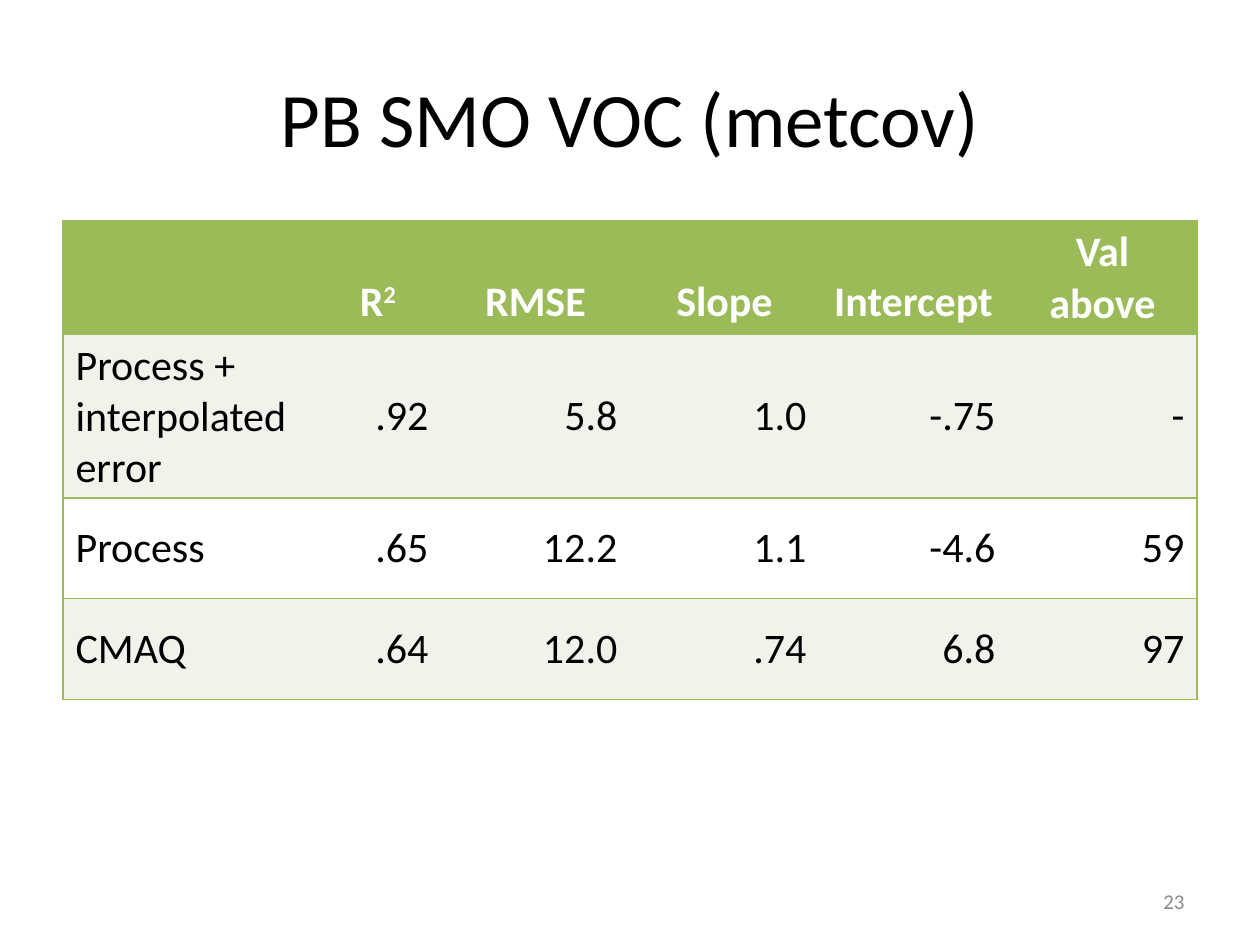
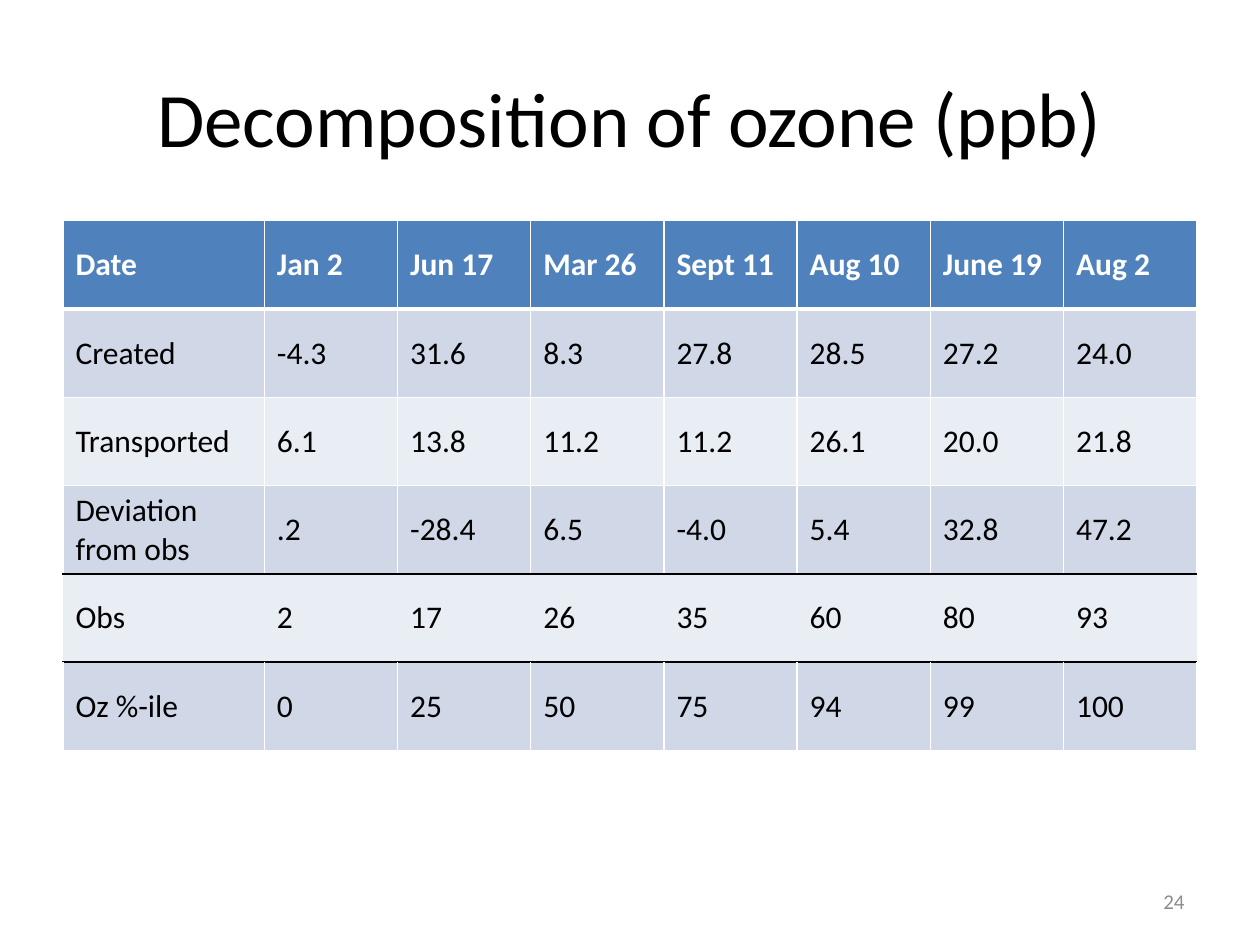
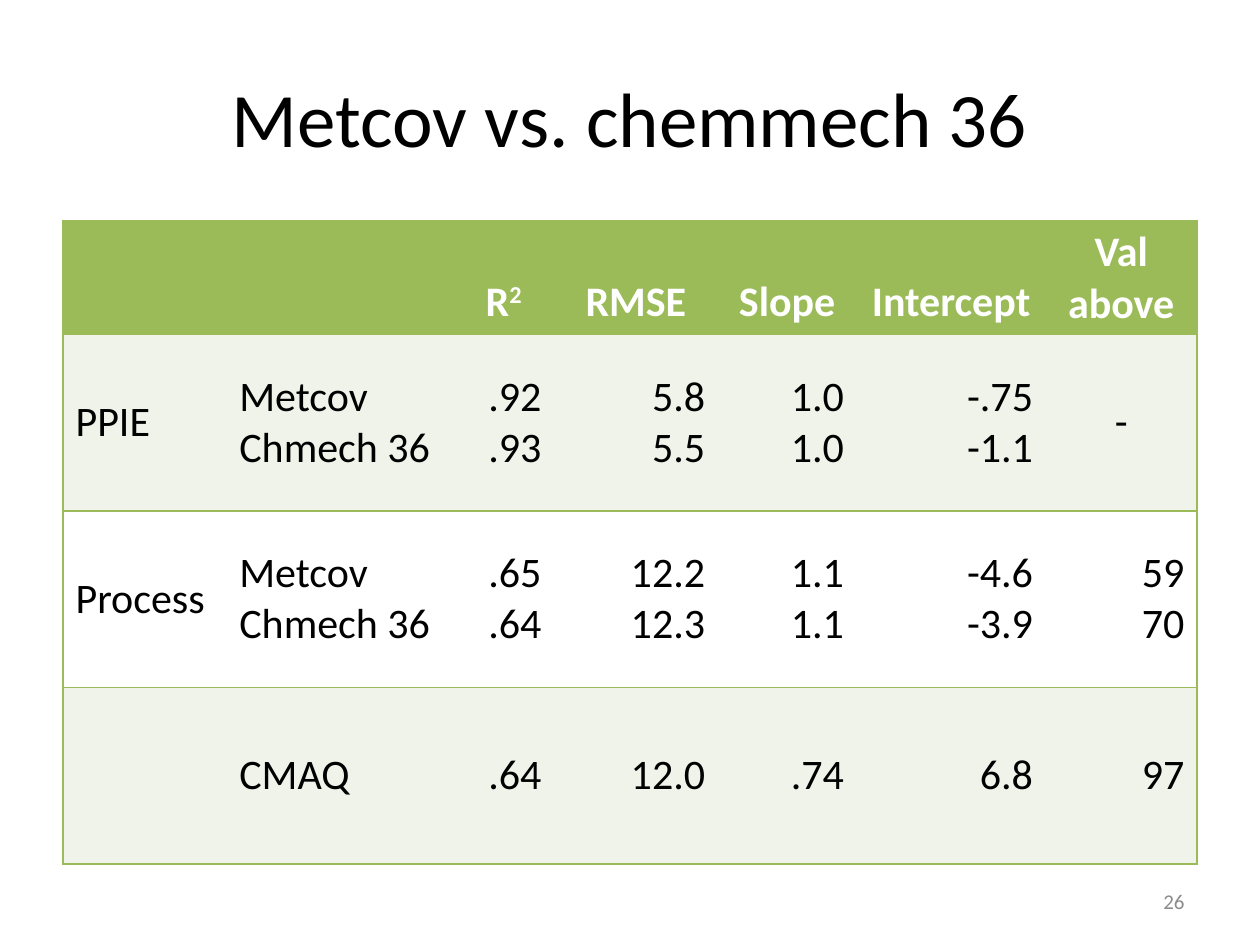
"""Build three slides of ozone model tables."""
from dataclasses import dataclass

from lxml.etree import SubElement
from pptx import Presentation
from pptx.dml.color import RGBColor
from pptx.enum.text import MSO_ANCHOR as Anchor, PP_ALIGN as Align
from pptx.oxml.ns import qn
from pptx.util import Cm, Pt


@dataclass(frozen=True)
class Theme:
    font: str = "Calibri"
    title_size: int = 44
    score_size: int = 24
    ozone_size: int = 18
    number_size: int = 12
    black: str = "000000"
    white: str = "FFFFFF"
    grey: str = "8C8C8C"
    green: str = "9BBB59"
    green_tint: str = "EFF3EA"
    blue: str = "4F81BD"
    blue_dark_tint: str = "D0D8E8"
    blue_light_tint: str = "E9EDF4"


THEME = Theme()
SLIDE_SIZE = (25.4, 19.05)
TITLE_BOX = (1.27, 0.76, 22.86, 3.18)
NUMBER_BOX = (18.21, 17.65, 5.92, 1.02)
TABLE_LEFT, TABLE_TOP, TABLE_WIDTH = 1.27, 4.45, 22.86
DATE_LABEL_WIDTH, DATE_COUNT = 4.06, 7
DATE_WIDTH = (TABLE_WIDTH - DATE_LABEL_WIDTH) / DATE_COUNT
NO_STYLE = "{2D5ABB26-0587-4C30-8999-92F81FD0307C}"
SCORES = ["R^2", "RMSE", "Slope", "Intercept", "Val above"]


def score_edges(row, column, last_column):
    edges = {"T": (THEME.green, 1), "B": (THEME.green, 1)}
    if column == 0:
        edges["L"] = (THEME.green, 1)
    if column == last_column:
        edges["R"] = (THEME.green, 1)
    return edges


def ozone_edges(row, column, last_column):
    thin, thick, rule = (THEME.white, 1), (THEME.white, 3), (THEME.black, 1)
    sides = {"L": thin, "R": thin}
    return [
        {**sides, "T": thin, "B": thick},
        {**sides, "T": thick, "B": thin},
        {**sides, "T": thin, "B": thin},
        {**sides, "T": thin, "B": rule},
        {"T": rule},
        {**sides, "B": thin},
    ][row]


SCORE_STYLE = {
    "size": THEME.score_size,
    "header_fill": THEME.green,
    "bands": (THEME.green_tint, THEME.white),
    "header_align": Align.CENTER,
    "header_anchor": Anchor.BOTTOM,
    "value_align": Align.RIGHT,
    "edges": score_edges,
}
OZONE_STYLE = {
    "size": THEME.ozone_size,
    "header_fill": THEME.blue,
    "bands": (THEME.blue_dark_tint, THEME.blue_light_tint),
    "header_align": Align.LEFT,
    "header_anchor": Anchor.MIDDLE,
    "value_align": Align.LEFT,
    "edges": ozone_edges,
}

SLIDES = [
    {
        "title": "PB SMO VOC (metcov)",
        "number": "23",
        "style": SCORE_STYLE,
        "label_columns": 1,
        "centred": set(),
        "widths": [5.08, 2.54, 3.81, 3.81, 3.81, 3.81],
        "heights": [2.03] * 4,
        "rows": [
            ["", *SCORES],
            ["Process + interpolated error", ".92", "5.8", "1.0", "-.75", "-"],
            ["Process", ".65", "12.2", "1.1", "-4.6", "59"],
            ["CMAQ", ".64", "12.0", ".74", "6.8", "97"],
        ],
    },
    {
        "title": "Decomposition of ozone (ppb)",
        "number": "24",
        "style": OZONE_STYLE,
        "label_columns": 1,
        "centred": set(),
        "widths": [DATE_LABEL_WIDTH] + [DATE_WIDTH] * DATE_COUNT,
        "heights": [1.78] * 6,
        "rows": [
            ["Date", "Jan 2", "Jun 17", "Mar 26", "Sept 11", "Aug 10", "June 19", "Aug 2"],
            ["Created", "-4.3", "31.6", "8.3", "27.8", "28.5", "27.2", "24.0"],
            ["Transported", "6.1", "13.8", "11.2", "11.2", "26.1", "20.0", "21.8"],
            ["Deviation from obs", ".2", "-28.4", "6.5", "-4.0", "5.4", "32.8", "47.2"],
            ["Obs", "2", "17", "26", "35", "60", "80", "93"],
            ["Oz %-ile", "0", "25", "50", "75", "94", "99", "100"],
        ],
    },
    {
        "title": "Metcov vs. chemmech 36",
        "number": "26",
        "style": SCORE_STYLE,
        "label_columns": 2,
        "centred": {(1, 6)},
        "widths": [3.3, 4.57, 2.03, 3.3, 2.8, 3.81, 3.05],
        "heights": [2.03] + [3.56] * 3,
        "rows": [
            ["", "", *SCORES],
            ["PPIE", "Metcov\nChmech 36", ".92\n.93", "5.8\n5.5", "1.0\n1.0", "-.75\n-1.1", "-"],
            ["Process", "Metcov\nChmech 36", ".65\n.64", "12.2\n12.3", "1.1\n1.1", "-4.6\n-3.9", "59\n70"],
            ["", "CMAQ", ".64", "12.0", ".74", "6.8", "97"],
        ],
    },
]


def write(frame, text, *, size, color=THEME.black, bold=False, align=Align.LEFT):
    """Write lines as paragraphs, raising what follows a caret."""
    for index, line in enumerate(text.split("\n")):
        paragraph = frame.add_paragraph() if index else frame.paragraphs[0]
        paragraph.alignment = align
        for part, content in enumerate(line.split("^")):
            if not content:
                continue
            run = paragraph.add_run()
            run.text = content
            run.font.name = THEME.font
            run.font.size = Pt(size)
            run.font.bold = bold
            run.font.color.rgb = RGBColor.from_string(color)
            if part:
                run.font._element.set("baseline", "30000")


def add_text(slide, box, text, **text_format):
    frame = slide.shapes.add_textbox(*map(Cm, box)).text_frame
    frame.word_wrap = True
    frame.vertical_anchor = Anchor.MIDDLE
    write(frame, text, **text_format)


def set_edges(cell, edges):
    properties = cell._tc.get_or_add_tcPr()
    for side in "LRTB":
        if side in edges:
            color, width = edges[side]
            line = SubElement(properties, qn(f"a:ln{side}"), w=str(Pt(width)))
            SubElement(SubElement(line, qn("a:solidFill")), qn("a:srgbClr"), val=color)


def add_score_table(slide, content):
    rows, widths, heights, style = (content[key] for key in ("rows", "widths", "heights", "style"))
    box = (TABLE_LEFT, TABLE_TOP, TABLE_WIDTH, sum(heights))
    table = slide.shapes.add_table(len(rows), len(widths), *map(Cm, box)).table
    table.first_row = table.horz_banding = False
    table._tbl.tblPr.find(qn("a:tableStyleId")).text = NO_STYLE
    for column, width in zip(table.columns, widths):
        column.width = Cm(width)
    for row, height in zip(table.rows, heights):
        row.height = Cm(height)
    for row_index, values in enumerate(rows):
        header = row_index == 0
        fill = style["header_fill"] if header else style["bands"][(row_index - 1) % 2]
        for column_index, text in enumerate(values):
            if header:
                align = style["header_align"]
            elif (row_index, column_index) in content["centred"]:
                align = Align.CENTER
            elif column_index < content["label_columns"]:
                align = Align.LEFT
            else:
                align = style["value_align"]
            cell = table.cell(row_index, column_index)
            set_edges(cell, style["edges"](row_index, column_index, len(values) - 1))
            cell.fill.solid()
            cell.fill.fore_color.rgb = RGBColor.from_string(fill)
            cell.vertical_anchor = style["header_anchor"] if header else Anchor.MIDDLE
            write(cell.text_frame, text, size=style["size"], bold=header, align=align,
                  color=THEME.white if header else THEME.black)


def main():
    presentation = Presentation()
    presentation.slide_width, presentation.slide_height = map(Cm, SLIDE_SIZE)
    for content in SLIDES:
        slide = presentation.slides.add_slide(presentation.slide_layouts[6])
        add_text(slide, TITLE_BOX, content["title"], size=THEME.title_size, align=Align.CENTER)
        add_score_table(slide, content)
        add_text(slide, NUMBER_BOX, content["number"], size=THEME.number_size,
                 color=THEME.grey, align=Align.RIGHT)
    presentation.save("out.pptx")


if __name__ == "__main__":
    main()
